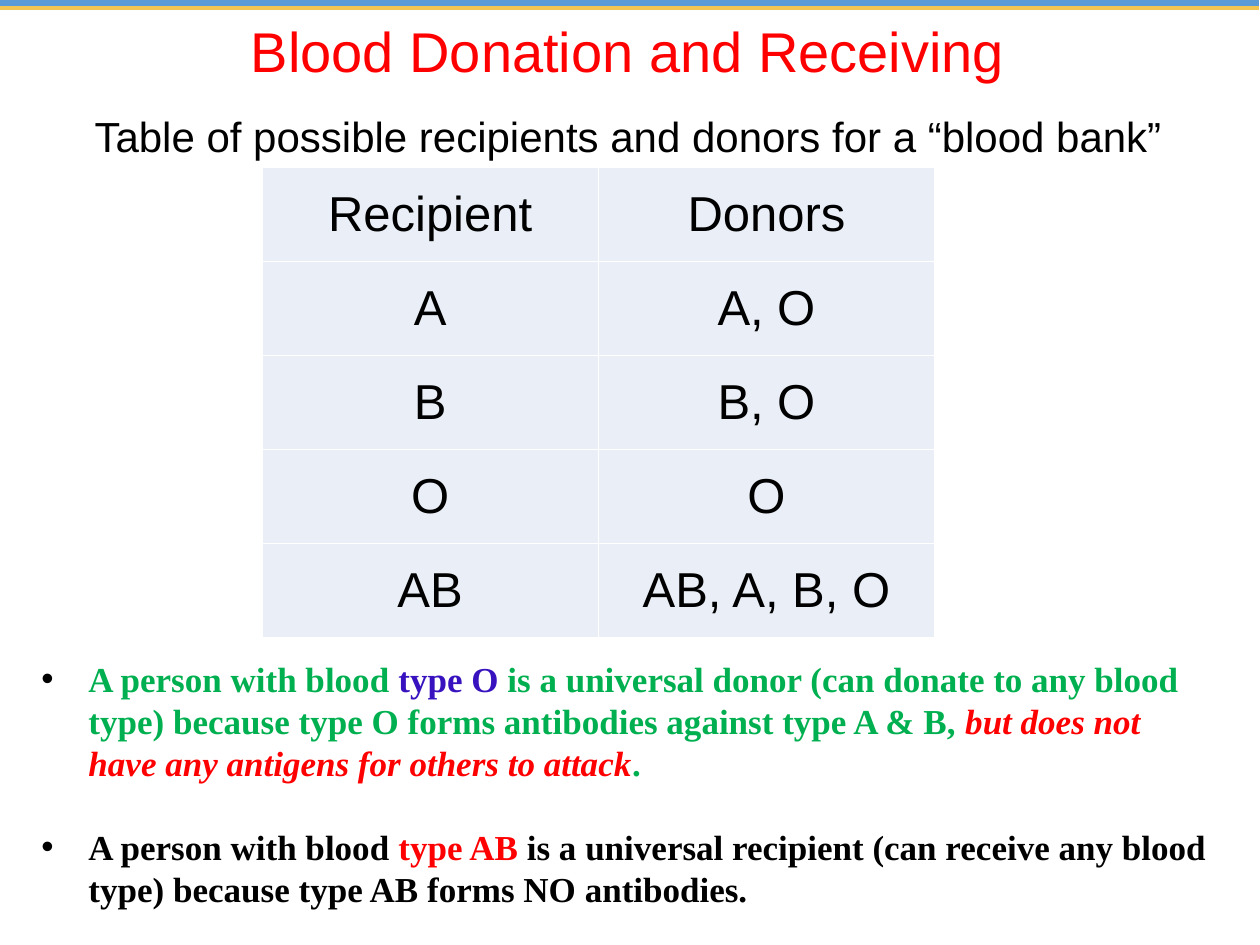
from lxml.etree import SubElement
from pptx import Presentation
from pptx.dml.color import RGBColor
from pptx.enum.shapes import MSO_CONNECTOR
from pptx.enum.text import MSO_ANCHOR, MSO_AUTO_SIZE, PP_ALIGN
from pptx.oxml.ns import qn
from pptx.util import Cm, Pt

BLACK = RGBColor(0x00, 0x00, 0x00)
WHITE = RGBColor(0xFF, 0xFF, 0xFF)
RED = RGBColor(0xFF, 0x00, 0x00)
GREEN = RGBColor(0x00, 0xB0, 0x50)
VIOLET = RGBColor(0x37, 0x12, 0xBE)
BLUE = RGBColor(0x5B, 0x9B, 0xD5)
GOLD = RGBColor(0xF2, 0xC5, 0x52)
PALE = RGBColor(0xEA, 0xEF, 0xF7)

HEADING = "Blood Donation and Receiving"
SUBHEADING = "Table of possible recipients and donors for a “blood bank”"
DONORS = [
    ("Recipient", "Donors"),
    ("A", "A, O"),
    ("B", "B, O"),
    ("O", "O"),
    ("AB", "AB, A, B, O"),
]
# Each bullet is a list of (text, colour, italic)
BULLETS = [
    [
        ("A person with blood ", GREEN, False),
        ("type O", VIOLET, False),
        (" is a universal donor (can donate to any blood type) because "
         "type O forms antibodies against type A & B, ", GREEN, False),
        ("but does not have any antigens for others to attack", RED, True),
        (".", GREEN, False),
    ],
    [
        ("A person with blood ", BLACK, False),
        ("type AB ", RED, False),
        ("is a universal recipient (can receive any blood type) because "
         "type AB forms NO antibodies.", BLACK, False),
    ],
]
STRIPES = [(0.08, BLUE, 4), (0.16, GOLD, 2)]  # y in cm, colour, points


def add_span(para, text, font="Arial", size=28, color=BLACK, bold=False, italic=False):
    span = para.add_run()
    span.text = text
    span.font.name = font
    span.font.size = Pt(size)
    span.font.color.rgb = color
    span.font.bold = bold
    span.font.italic = italic


def place(box, left, top, width, height, anchor):
    box.left, box.top, box.width, box.height = Cm(left), Cm(top), Cm(width), Cm(height)
    frame = box.text_frame
    frame.word_wrap = True
    frame.auto_size = MSO_AUTO_SIZE.NONE
    frame.vertical_anchor = anchor
    return frame


def next_para(frame, index):
    return frame.add_paragraph() if index else frame.paragraphs[0]


def add_stripe(page, y, color, points):
    stripe = page.shapes.add_connector(
        MSO_CONNECTOR.STRAIGHT, Cm(-0.03), Cm(y), Cm(25.37), Cm(y))
    stripe.line.color.rgb = color
    stripe.line.width = Pt(points)
    SubElement(stripe._element.spPr, qn("a:effectLst"))


def add_borders(cell, color, points):
    properties = cell._tc.get_or_add_tcPr()
    for side in ("a:lnL", "a:lnR", "a:lnT", "a:lnB"):
        line = SubElement(properties, qn(side), w=str(Pt(points)))
        fill = SubElement(line, qn("a:solidFill"))
        SubElement(fill, qn("a:srgbClr"), val=str(color))


def fill_title(box):
    frame = place(box, 0, 0.2, 25.32, 3.18, MSO_ANCHOR.BOTTOM)
    for index, (text, size, color, gap) in enumerate(
            [(HEADING, 32, RED, 0), (SUBHEADING, 24, BLACK, 15.5)]):
        para = next_para(frame, index)
        para.alignment = PP_ALIGN.CENTER
        para.space_before = Pt(gap)
        add_span(para, text, size=size, color=color)


def add_donor_table(page):
    table = page.shapes.add_table(
        len(DONORS), 2, Cm(5.28), Cm(3.38), Cm(13.56), Cm(9.47)).table
    table.first_row = table.horz_banding = False
    for row, texts in enumerate(DONORS):
        for column, text in enumerate(texts):
            cell = table.cell(row, column)
            add_borders(cell, WHITE, 1)
            cell.fill.solid()
            cell.fill.fore_color.rgb = PALE
            cell.vertical_anchor = MSO_ANCHOR.MIDDLE
            cell.margin_left = cell.margin_right = Cm(0.18)
            cell.margin_top = cell.margin_bottom = 0
            para = cell.text_frame.paragraphs[0]
            para.alignment = PP_ALIGN.CENTER
            add_span(para, text)


def fill_bullets(box):
    frame = place(box, 0.58, 13.13, 24.16, 5.38, MSO_ANCHOR.TOP)
    for index, spans in enumerate(BULLETS):
        para = next_para(frame, index)
        para.line_spacing = Pt(24)
        para.space_before = Pt(24 if index else 0)
        properties = para._p.get_or_add_pPr()
        properties.set("marL", str(Cm(0.95)))
        properties.set("indent", str(Cm(-0.95)))
        bullet_color = SubElement(properties, qn("a:buClr"))
        SubElement(bullet_color, qn("a:srgbClr"), val=str(BLACK))
        SubElement(properties, qn("a:buChar"), char="•")
        for text, color, italic in spans:
            add_span(para, text, font="Times New Roman", size=20,
                     color=color, bold=True, italic=italic)


def main():
    deck = Presentation()
    deck.slide_width, deck.slide_height = Cm(25.4), Cm(19.05)
    page = deck.slides.add_slide(deck.slide_layouts[1])
    for stripe in STRIPES:
        add_stripe(page, *stripe)
    add_donor_table(page)
    fill_title(page.shapes.title)
    fill_bullets(page.placeholders[1])
    deck.save("out.pptx")


if __name__ == "__main__":
    main()
